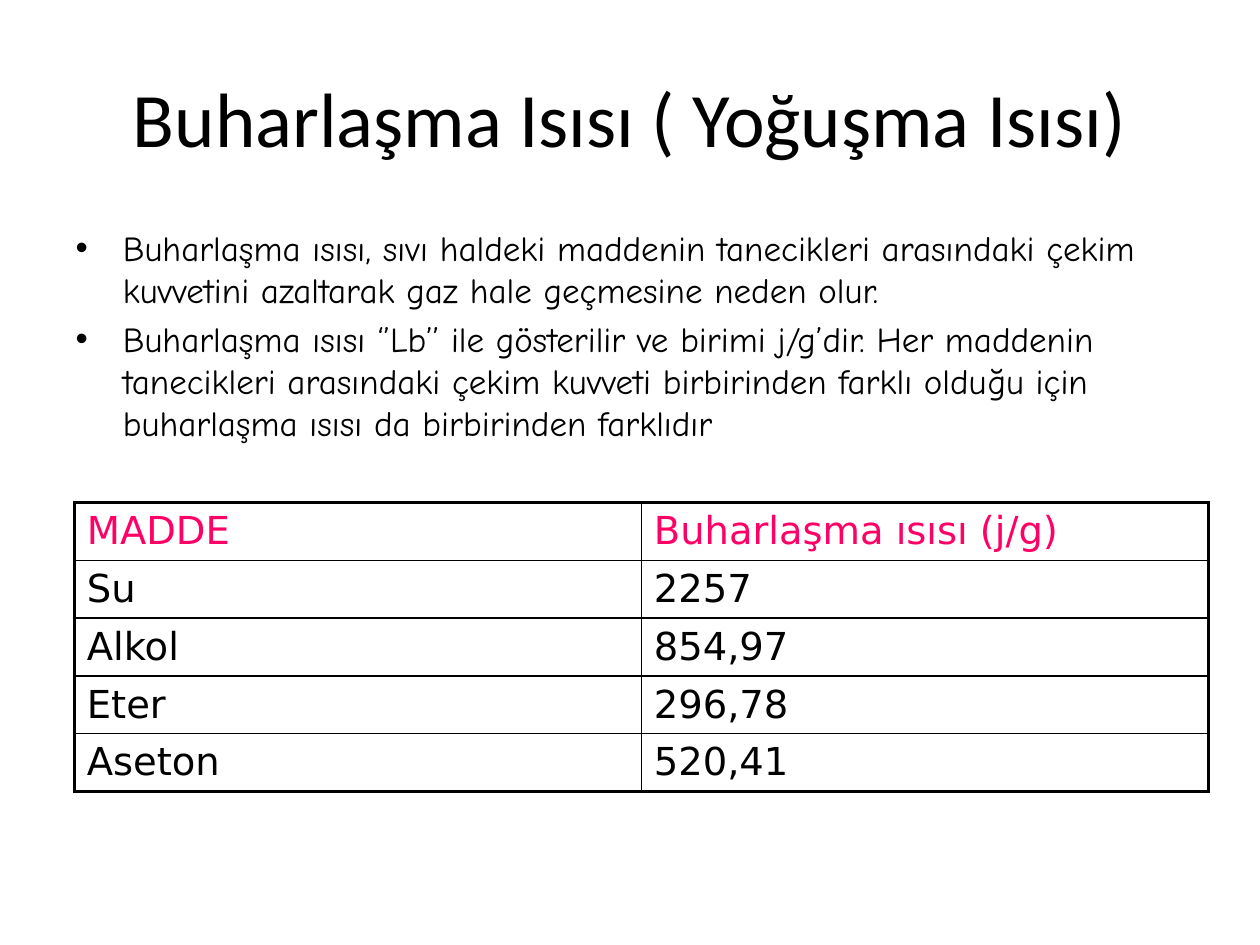
from lxml.etree import SubElement
from pptx import Presentation
from pptx.dml.color import RGBColor
from pptx.enum.text import MSO_ANCHOR, MSO_AUTO_SIZE, PP_ALIGN
from pptx.oxml.ns import qn
from pptx.util import Pt

COLORS = {"text": "000000", "heading": "FF0066", "border": "000000"}
TITLE = "Buharlaşma Isısı ( Yoğuşma Isısı)"
BULLETS = [
    "Buharlaşma ısısı, sıvı haldeki maddenin tanecikleri arasındaki çekim "
    "kuvvetini azaltarak gaz hale geçmesine neden olur.",
    "Buharlaşma ısısı ‘’Lb’’ ile gösterilir ve birimi j/g’dir. Her maddenin "
    "tanecikleri arasındaki çekim kuvveti birbirinden farklı olduğu için "
    "buharlaşma ısısı da birbirinden farklıdır",
]
ROWS = [
    ("MADDE", "Buharlaşma ısısı (j/g)"),
    ("Su", "2257"),
    ("Alkol", "854,97"),
    ("Eter", "296,78"),
    ("Aseton", "520,41"),
]
OUTER, INNER = 2.25, 1


def add_run(p, text, font, size, color="text"):
    r = p.add_run()
    r.text = text
    r.font.name = font
    r.font.size = Pt(size)
    r.font.color.rgb = RGBColor.from_string(COLORS[color])


def place(sp, left, top, width, height):
    sp.left, sp.top, sp.width, sp.height = map(Pt, (left, top, width, height))
    sp.text_frame.auto_size = MSO_AUTO_SIZE.NONE
    return sp.text_frame


def fill_title(sp):
    tf = place(sp, 36, 21.6, 648, 90)
    tf.vertical_anchor = MSO_ANCHOR.MIDDLE
    p = tf.paragraphs[0]
    p.alignment = PP_ALIGN.CENTER
    add_run(p, TITLE, "Calibri", 44)


def fill_bullets(sp):
    # Bullet, indent and spacing come from the body placeholder
    tf = place(sp, 36, 126, 648, 138)
    for i, text in enumerate(BULLETS):
        p = tf.add_paragraph() if i else tf.paragraphs[0]
        add_run(p, text, "Comic Neue", 20)


def set_borders(cell, widths):
    tc_pr = cell._tc.get_or_add_tcPr()
    for i, (side, width) in enumerate(widths.items()):
        ln = tc_pr.makeelement(qn(f"a:{side}"), {"w": str(Pt(width))})
        fill = SubElement(ln, qn("a:solidFill"))
        SubElement(fill, qn("a:srgbClr"), val=COLORS["border"])
        tc_pr.insert(i, ln)  # borders come before the cell fill


def add_heat_table(s):
    n_rows, n_cols = len(ROWS), len(ROWS[0])
    frame = s.shapes.add_table(n_rows, n_cols, Pt(42.5), Pt(287.3),
                               Pt(648), Pt(33 * n_rows))
    table = frame.table
    table.first_row = table.horz_banding = False
    for i, row in enumerate(ROWS):
        for j, text in enumerate(row):
            cell = table.cell(i, j)
            cell.fill.background()
            add_run(cell.text_frame.paragraphs[0], text, "DejaVu Sans", 22,
                    "text" if i else "heading")
            set_borders(cell, {
                "lnL": INNER if j else OUTER,
                "lnR": OUTER if j == n_cols - 1 else INNER,
                "lnT": INNER if i else OUTER,
                "lnB": OUTER if i == n_rows - 1 else INNER,
            })


def main():
    prs = Presentation()
    prs.slide_width, prs.slide_height = Pt(720), Pt(540)
    s = prs.slides.add_slide(prs.slide_layouts[1])
    fill_title(s.shapes.title)
    fill_bullets(s.placeholders[1])
    add_heat_table(s)
    prs.save("out.pptx")


if __name__ == "__main__":
    main()
